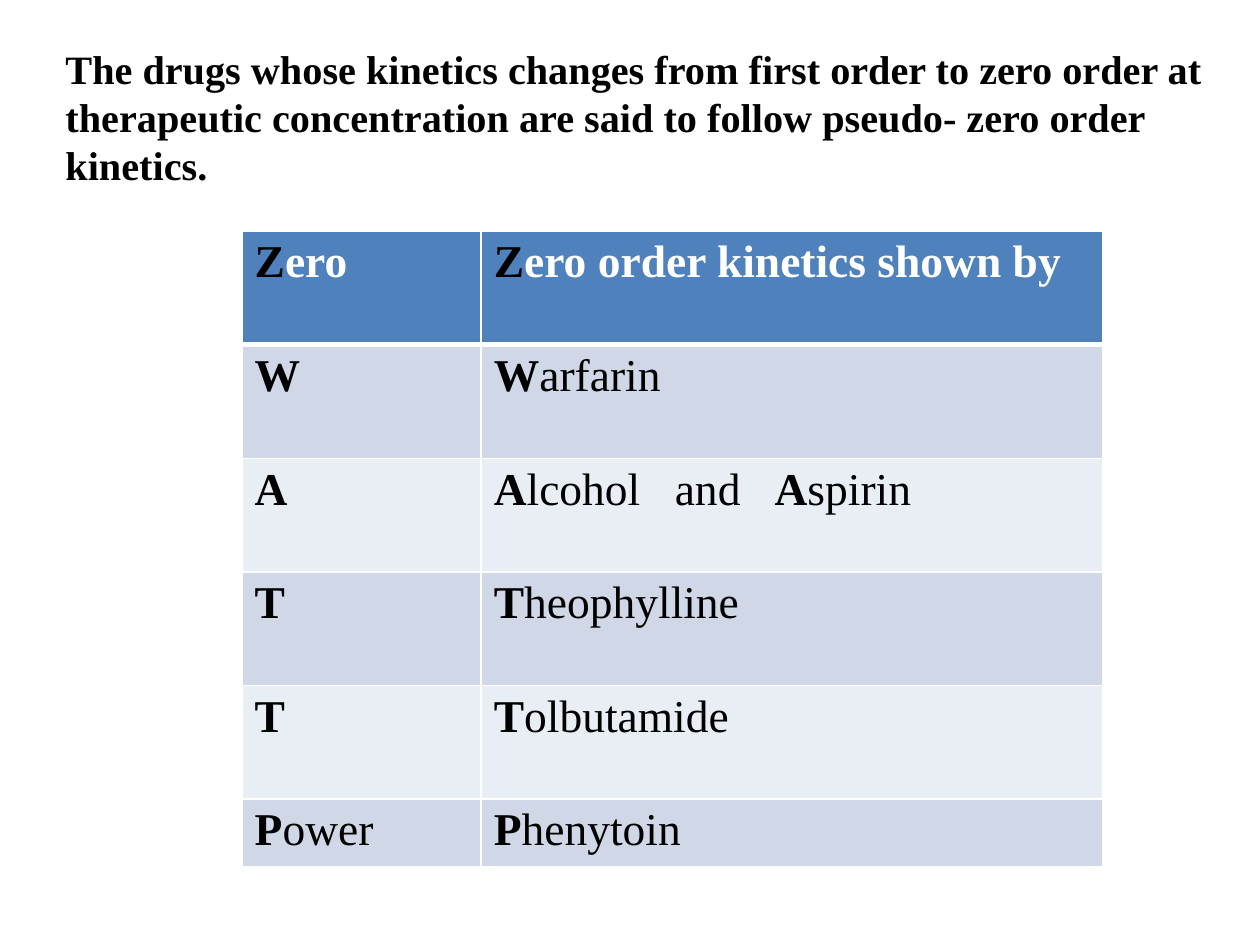
from typing import NamedTuple

from lxml.etree import SubElement
from pptx import Presentation
from pptx.dml.color import RGBColor
from pptx.enum.text import MSO_VERTICAL_ANCHOR as Anchor
from pptx.oxml.ns import qn
from pptx.util import Cm, Pt

COLORS = {
    "text": "000000",
    "header_text": "FFFFFF",
    "border": "FFFFFF",
    "header": "4F81BD",
    "odd_row": "D0D8E8",
    "even_row": "E9EDF4",
}
TITLE = (
    "The drugs whose kinetics changes from first order to zero order at "
    "therapeutic concentration are said to follow pseudo- zero order kinetics."
)
COLUMN_WIDTHS = (4.82, 12.53)
ROW_HEIGHT, LAST_ROW_HEIGHT = 2.29, 1.3
DRUG_TABS = (3.65, 5.66)


class Row(NamedTuple):
    mnemonic: str
    drugs: str


ROWS = [
    Row("Zero", "Zero order kinetics shown by"),
    Row("W", "Warfarin"),
    Row("A", "Alcohol\tand\tAspirin"),
    Row("T", "Theophylline"),
    Row("T", "Tolbutamide"),
    Row("Power", "Phenytoin"),
]


def add_run(paragraph, text: str, size: float, bold: bool, color: str) -> None:
    run = paragraph.add_run()
    run.text = text
    font_format = {"name": "Times New Roman", "size": Pt(size), "bold": bold}
    for attribute, value in font_format.items():
        setattr(run.font, attribute, value)
    run.font.color.rgb = RGBColor.from_string(COLORS[color])


def add_tab_stops(paragraph, positions: tuple[float, ...]) -> None:
    properties = paragraph._p.get_or_add_pPr()
    tab_list = SubElement(properties, qn("a:tabLst"))
    for position in positions:
        SubElement(tab_list, qn("a:tab"), pos=str(Cm(position)), algn="l")


def set_borders(cell, widths: dict[str, float]) -> None:
    """Draw the cell sides; widths maps a side (L, R, T, B) to points."""
    properties = cell._tc.get_or_add_tcPr()
    for side, width in widths.items():
        line = SubElement(properties, qn(f"a:ln{side}"), w=str(Pt(width)))
        fill = SubElement(line, qn("a:solidFill"))
        SubElement(fill, qn("a:srgbClr"), val=COLORS["border"])


def fill_cell(cell, text: str, row_index: int) -> None:
    """Write the text with the initials of the mnemonic in bold black."""
    is_header = row_index == 0
    set_borders(cell, {
        "L": 1,
        "R": 1,
        "T": 3 if row_index == 1 else 1,
        "B": 3 if is_header else 1,
    })
    row_color = "odd_row" if row_index % 2 else "even_row"
    cell.fill.solid()
    cell.fill.fore_color.rgb = RGBColor.from_string(
        COLORS["header" if is_header else row_color]
    )
    paragraph = cell.text_frame.paragraphs[0]
    if "\t" in text:
        add_tab_stops(paragraph, DRUG_TABS)
    initial = text[0]
    for index, part in enumerate(text.split(initial)):
        if index:
            add_run(paragraph, initial, 26, True, "text")
        if part:
            color = "header_text" if is_header else "text"
            add_run(paragraph, part, 26, is_header, color)


def add_title(slide) -> None:
    shape = slide.shapes.add_textbox(Cm(1.07), Cm(0.76), Cm(23.93), Cm(3.18))
    frame = shape.text_frame
    for attribute, value in {
        "word_wrap": True,
        "vertical_anchor": Anchor.MIDDLE,
    }.items():
        setattr(frame, attribute, value)
    add_run(frame.paragraphs[0], TITLE, 23, True, "text")


def add_drug_table(slide) -> None:
    heights = [ROW_HEIGHT] * (len(ROWS) - 1) + [LAST_ROW_HEIGHT]
    table = slide.shapes.add_table(
        len(ROWS), len(COLUMN_WIDTHS), Cm(4.88), Cm(4.66),
        Cm(sum(COLUMN_WIDTHS)), Cm(sum(heights)),
    ).table
    table.horz_banding = False
    for column, width in zip(table.columns, COLUMN_WIDTHS):
        column.width = Cm(width)
    for row_index, (row, height) in enumerate(zip(ROWS, heights)):
        table.rows[row_index].height = Cm(height)
        for column_index, text in enumerate(row):
            fill_cell(table.cell(row_index, column_index), text, row_index)


def main() -> None:
    presentation = Presentation()
    presentation.slide_width, presentation.slide_height = Cm(25.4), Cm(19.05)
    slide = presentation.slides.add_slide(presentation.slide_layouts[6])
    add_title(slide)
    add_drug_table(slide)
    presentation.save("out.pptx")


if __name__ == "__main__":
    main()
